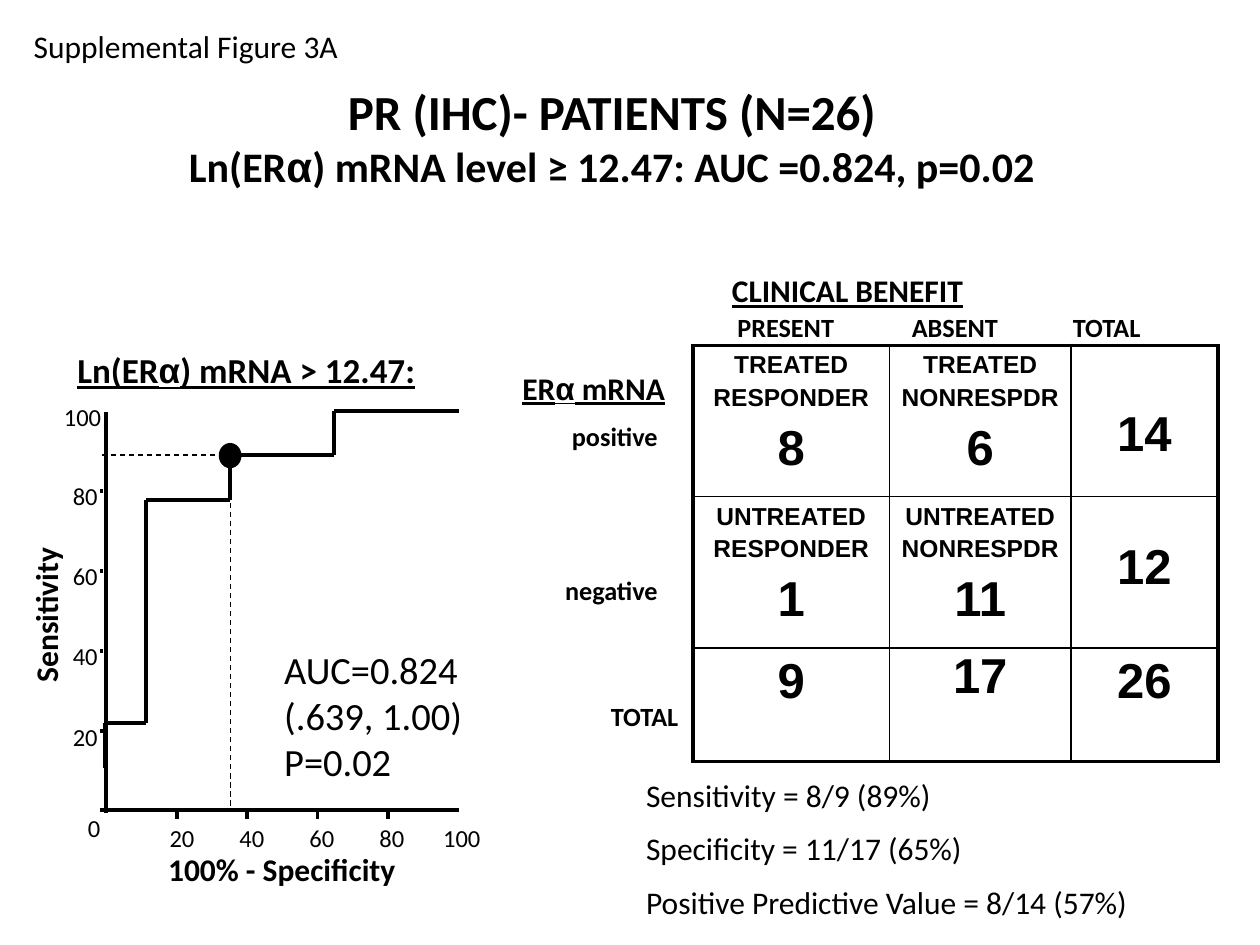
from lxml.etree import SubElement
from pptx import Presentation
from pptx.dml.color import RGBColor
from pptx.enum.dml import MSO_LINE
from pptx.enum.shapes import MSO_CONNECTOR, MSO_SHAPE
from pptx.enum.text import MSO_ANCHOR, MSO_AUTO_SIZE, PP_ALIGN
from pptx.oxml.ns import qn
from pptx.util import Cm, Pt

COLORS = {"ink": "000000"}
INK = RGBColor.from_string(COLORS["ink"])
LEFT, CENTER, RIGHT = PP_ALIGN.LEFT, PP_ALIGN.CENTER, PP_ALIGN.RIGHT


def write(frame, lines, size, align=LEFT, gap=0, **font_format):
    for row, line in enumerate(lines):
        text, points = line if isinstance(line, tuple) else (line, size)
        paragraph = frame.paragraphs[0] if row == 0 else frame.add_paragraph()
        paragraph.alignment = align
        paragraph.space_before = Pt(points * gap)
        for piece in filter(None, text.replace("α", "|α|").split("|")):
            run = paragraph.add_run()
            run.text = piece
            run.font.color.rgb = INK
            values = {"name": "Calibri", "size": Pt(points), **font_format}
            if piece == "α":
                values["name"] = "Arial"
            for name, value in values.items():
                setattr(run.font, name, value)


def draw_line(x1, y1, x2, y2, width=2.25, dash=None):
    stroke = slide.shapes.add_connector(MSO_CONNECTOR.STRAIGHT, Cm(x1), Cm(y1), Cm(x2), Cm(y2))
    stroke.line.color.rgb = INK
    stroke.line.width = Pt(width)
    stroke.line.dash_style = dash
    SubElement(stroke._element.spPr, qn("a:effectLst"))


deck = Presentation()
deck.slide_width, deck.slide_height = Cm(25.4), Cm(19.05)
slide = deck.slides.add_slide(deck.slide_layouts[1])

title, statistics = slide.placeholders
for holder, box in ((title, (2.29, 1.52, 20.09, 2.44)), (statistics, (12.77, 15.51, 11.73, 3.3))):
    holder.left, holder.top, holder.width, holder.height = map(Cm, box)
    holder.text_frame.auto_size = MSO_AUTO_SIZE.NONE
    holder.text_frame.vertical_anchor = MSO_ANCHOR.TOP

write(title.text_frame, [("PR (IHC)- PATIENTS (N=26)", 28),
                         "Ln(ERα) mRNA level ≥ 12.47: AUC =0.824, p=0.02"], 24, CENTER, bold=True)
write(statistics.text_frame, ["Sensitivity = 8/9 (89%)", "Specificity = 11/17 (65%)",
                              "Positive Predictive Value = 8/14 (57%)"], 18, gap=0.5)
for paragraph in statistics.text_frame.paragraphs:
    properties = paragraph._p.get_or_add_pPr()
    properties.set("marL", "0")
    properties.set("indent", "0")
    SubElement(properties, qn("a:buNone"))

outcomes = [
    [["TREATED", "RESPONDER", ("8", 28)], ["TREATED", "NONRESPDR", ("6", 28)], [("14", 28)]],
    [["UNTREATED", "RESPONDER", ("1", 28)], ["UNTREATED", "NONRESPDR", ("11", 28)], [("12", 28)]],
    [[("9", 28)], [("17", 28)], [("26", 28)]],
]
column_widths, row_heights = (3.96, 3.66, 2.96), (3.05, 3.05, 2.29)
benefit = slide.shapes.add_table(3, 3, Cm(13.97), Cm(6.96), Cm(sum(column_widths)),
                                 Cm(sum(row_heights))).table
benefit.first_row = benefit.horz_banding = False
for column, width in zip(benefit.columns, column_widths):
    column.width = Cm(width)
for r, (row, height) in enumerate(zip(benefit.rows, row_heights)):
    row.height = Cm(height)
    for c, cell in enumerate(row.cells):
        write(cell.text_frame, outcomes[r][c], 14, CENTER, 0.2, name="Arial", bold=True)
        cell.margin_left = cell.margin_right = Cm(0.15)
        outer = {"a:lnL": c == 0, "a:lnR": c == 2, "a:lnT": r == 0, "a:lnB": r == 2}
        for side, is_outer in outer.items():
            border = SubElement(cell._tc.get_or_add_tcPr(), qn(side), w=str(Pt(2.25 if is_outer else 1)))
            SubElement(SubElement(border, qn("a:solidFill")), qn("a:srgbClr"), val=COLORS["ink"])
        cell.fill.background()
benefit.cell(0, 2).margin_top = Cm(1.25)
benefit.cell(1, 2).margin_top = Cm(0.87)
benefit.cell(2, 1).text_frame.paragraphs[0].line_spacing = 0.9

heading = {"size": 18, "bold": True, "underline": True}
table_label = {"size": 15, "bold": True}
axis_title = {"size": 18, "bold": True}
tick_label = {"size": 14}
padded = [
    (0.43, 0.42, 19.69, 1.02, "Supplemental Figure 3A", LEFT, {"size": 18}),
    (13.81, 5.34, 6.55, 0.99, "CLINICAL BENEFIT", CENTER, heading),
    (13.72, 6.15, 4.24, 0.86, "PRESENT", CENTER, table_label),
    (17.13, 6.15, 4.24, 0.86, "ABSENT", CENTER, table_label),
    (20.38, 6.15, 3.86, 0.86, "TOTAL", CENTER, table_label),
    (9.95, 7.3, 4.04, 0.99, "ERα mRNA", CENTER, heading),
    (10.13, 8.35, 3.38, 0.86, "positive", RIGHT, table_label),
    (10.13, 11.45, 3.38, 0.86, "negative", RIGHT, table_label),
    (11.05, 13.99, 3.89, 0.86, "TOTAL", CENTER, table_label),
    (1.31, 6.9, 8.38, 1.09, "Ln(ERα) mRNA > 12.47:", LEFT, {**heading, "size": 20}),
]
unpadded = [
    (5.73, 13.02, 4.85, 2.82, "AUC=0.824\n(.639, 1.00)\nP=0.02", LEFT, {"size": 22}),
    (3.39, 17.13, 5.36, 0.76, "100% - Specificity", LEFT, axis_title),
    (1.02, 16.4, 1, 0.58, "0", RIGHT, tick_label),
    (1.04, 8.11, 1, 0.58, "100", RIGHT, tick_label),
    (-0.67, 12.02, 3.18, 0.76, "Sensitivity", CENTER, axis_title),
]
for step in range(1, 6):
    unpadded.append((1.76 + 1.41 * step, 16.6, 1, 0.58, str(20 * step), CENTER, tick_label))
for step in range(1, 5):
    unpadded.append((0.97, 16.17 - 1.62 * step, 1, 0.58, str(20 * step), RIGHT, tick_label))

for labels, inset_x, inset_y in ((padded, 0.25, 0.13), (unpadded, 0, 0)):
    for left, top, width, height, text, align, style in labels:
        label = slide.shapes.add_textbox(Cm(left), Cm(top), Cm(width), Cm(height))
        frame = label.text_frame
        frame.word_wrap = True
        frame.margin_left = frame.margin_right = Cm(inset_x)
        frame.margin_top = frame.margin_bottom = Cm(inset_y)
        write(frame, text.split("\n"), align=align, **style)
        if text == "Sensitivity":
            label.rotation = 270

roc_moves = {"right": (0.42, 0), "up": (0, -0.9)}
roc_stretches = [("up", 1), ("right", 2), ("up", 5), ("right", 4),
                 ("up", 1), ("right", 5), ("up", 1), ("right", 6)]
roc_x, roc_y = 2.11, 15.48
for direction, count in roc_stretches:
    dx, dy = roc_moves[direction]
    for _ in range(count):
        draw_line(roc_x, roc_y, roc_x + dx, roc_y + dy)
        roc_x, roc_y = roc_x + dx, roc_y + dy

draw_line(2.13, 16.38, 2.13, 8.31)
draw_line(2.01, 16.33, 9.25, 16.33)
for step in range(1, 5):
    draw_line(2.14 + 1.42 * step, 16.51, 2.14 + 1.42 * step, 16.36)
    draw_line(2.01, 16.34 - 1.61 * step, 2.08, 16.34 - 1.61 * step)
draw_line(4.65, 9.22, 4.65, 16.28, 0.75, MSO_LINE.DASH)
draw_line(4.7, 9.17, 2.06, 9.17, 0.75, MSO_LINE.DASH)

cutoff = slide.shapes.add_shape(MSO_SHAPE.OVAL, Cm(4.45), Cm(8.97), Cm(0.38), Cm(0.43))
cutoff.shadow.inherit = False
cutoff.fill.solid()
cutoff.fill.fore_color.rgb = INK
cutoff.line.color.rgb = INK
cutoff.line.width = Pt(2.25)

deck.save("out.pptx")
